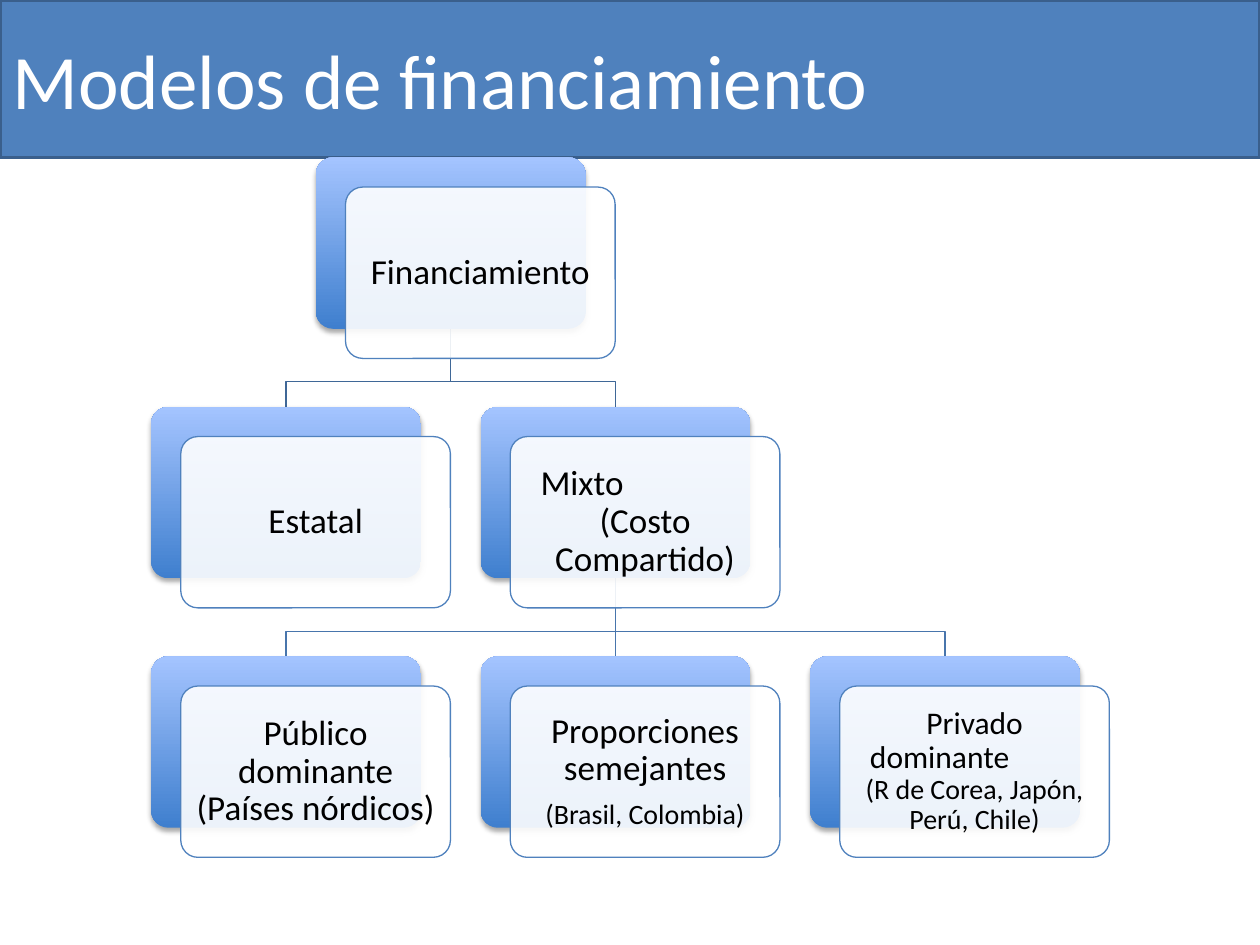
from dataclasses import dataclass

from lxml import etree
from pptx import Presentation
from pptx import util as u
from pptx.dml.color import RGBColor
from pptx.enum import shapes, text
from pptx.oxml.ns import qn

Inches, Pt = u.Inches, u.Pt
CENTER, LEFT = text.PP_ALIGN.CENTER, text.PP_ALIGN.LEFT


@dataclass(frozen=True)
class Theme:
    """Colours, font and type sizes of the slide."""
    font: str = "Calibri"
    accent: str = "4F81BD"
    title_line: str = "3A5F8C"
    grad_low: str = "3F7FCE"
    grad_high: str = "A4C4FF"
    link_upper: str = "3F6797"
    link_lower: str = "4875AC"
    white: str = "FFFFFF"
    black: str = "000000"
    title: int = 44
    body: int = 20
    compact: int = 18
    note: int = 16


@dataclass(frozen=True)
class Line:
    """One paragraph of a card."""
    words: str
    size: int = Theme.body
    align: text.PP_ALIGN = CENTER
    indent: float = 0
    after: int = 0


T = Theme()
CARD_W, CARD_H, OFFSET = 2.14, 1.36, 0.235
LEFT_X, TOP_Y, COL_STEP, ROW_STEP = 1.2, 1.25, 2.615, 1.98
CARDS = [
    (0.5, 0, [Line("Financiamiento")]),
    (0, 1, [Line("Estatal")]),
    (1, 1, [Line("Mixto", align=LEFT, indent=0.12), Line("(Costo Compartido)")]),
    (0, 2, [Line("Público dominante (Países nórdicos)")]),
    (1, 2, [Line("Proporciones semejantes", after=7),
            Line("(Brasil, Colombia)", T.note)]),
    (2, 2, [Line("Privado", T.compact),
            Line("dominante", T.compact, LEFT, 0.12),
            Line("(R de Corea, Japón, Perú, Chile)", T.note)]),
]
LINKS = [(1, 1, 2, T.link_lower), (1, 1, 1, T.link_lower), (1, 1, 0, T.link_lower),
         (0.5, 0, 1, T.link_upper), (0.5, 0, 0, T.link_upper)]


def rgb(value):
    """Return a colour from its hex value."""
    return RGBColor.from_string(value)


def set_font(p, size, color):
    """Set the font of a paragraph."""
    p.font.name, p.font.size, p.font.color.rgb = T.font, Pt(size), rgb(color)


def set_line(line, color, width=0.75):
    """Set the colour and width of a line."""
    line.color.rgb, line.width = rgb(color), Pt(width)


def add_title(s, x, y, w, h):
    """Draw the title band."""
    sp = s.shapes.add_shape(shapes.MSO_SHAPE.RECTANGLE,
                            Inches(x), Inches(y), Inches(w), Inches(h))
    sp.shadow.inherit = False
    sp.fill.solid()
    sp.fill.fore_color.rgb = rgb(T.accent)
    set_line(sp.line, T.title_line, 2)
    tf = sp.text_frame
    tf.vertical_anchor = text.MSO_ANCHOR.MIDDLE
    p = tf.paragraphs[0]
    p.text, p.alignment = "Modelos de financiamiento", LEFT
    set_font(p, T.title, T.white)


def add_link(s, x1, y1, x2, y2, color):
    """Join a parent card to a child card."""
    if x1 == x2:
        sp = s.shapes.add_connector(shapes.MSO_CONNECTOR.STRAIGHT,
                                    Inches(x1), Inches(y1), Inches(x2), Inches(y2))
        etree.SubElement(sp._element.spPr, qn("a:effectLst"))
    else:
        bend = y2 - 0.2
        builder = s.shapes.build_freeform(Inches(x1), Inches(y1))
        builder.add_line_segments([(Inches(x), Inches(y)) for x, y in
                                   ((x1, bend), (x2, bend), (x2, y2))], close=False)
        sp = builder.convert_to_shape()
        sp.fill.background()
        sp.shadow.inherit = False
    set_line(sp.line, color)


def add_panel(s, x, y, w, h):
    """Add a rounded panel without a shadow."""
    sp = s.shapes.add_shape(shapes.MSO_SHAPE.ROUNDED_RECTANGLE,
                            Inches(x), Inches(y), Inches(w), Inches(h))
    sp.adjustments[0] = 0.1
    sp.shadow.inherit = False
    return sp


def add_alpha(color, percent):
    """Set the opacity of a colour element."""
    etree.SubElement(color, qn("a:alpha"), val=str(percent * 1000))


def add_shadow(sp):
    """Add a soft shadow below a shape."""
    effects = sp._element.spPr.find(qn("a:effectLst"))
    shadow = etree.SubElement(effects, qn("a:outerShdw"), blurRad=str(Pt(3.1)),
                              dist=str(Pt(1.8)), dir="5400000", rotWithShape="0")
    add_alpha(etree.SubElement(shadow, qn("a:srgbClr"), val=T.black), 35)


def add_card(s, x, y, w, h, lines):
    """Draw a gradient panel, its translucent front panel and the text."""
    back = add_panel(s, x, y, w, h)
    back.fill.gradient()
    back.fill.gradient_angle = 90
    for stop, color in zip(back.fill.gradient_stops, (T.grad_low, T.grad_high)):
        stop.color.rgb = rgb(color)
    back.line.fill.background()
    add_shadow(back)

    x, y = x + OFFSET, y + OFFSET
    front = add_panel(s, x, y, w, h)
    front.fill.solid()
    front.fill.fore_color.rgb = rgb(T.white)
    add_alpha(front._element.spPr.find(qn("a:solidFill"))[0], 90)
    set_line(front.line, T.accent)

    pad = 0.04
    tf = s.shapes.add_textbox(Inches(x + pad), Inches(y + pad), Inches(w - 2 * pad),
                              Inches(h - 2 * pad)).text_frame
    tf.word_wrap = True
    tf.vertical_anchor = text.MSO_ANCHOR.MIDDLE
    tf.margin_left = tf.margin_right = tf.margin_top = tf.margin_bottom = Inches(0.08)
    for i, line in enumerate(lines):
        p = tf.add_paragraph() if i else tf.paragraphs[0]
        p.text, p.alignment = line.words, line.align
        p.line_spacing, p.space_after = 0.9, Pt(line.after)
        if line.indent:
            p._p.get_or_add_pPr().set("marL", str(Inches(line.indent)))
        set_font(p, line.size, T.black)


def add_tree(s, x, y):
    """Draw the links and cards of the tree from its top left corner."""
    def place(col, row):
        return x + col * COL_STEP, y + row * ROW_STEP

    for col, row, child, color in LINKS:
        x1, y1 = place(col, row)
        x2, y2 = place(child, row + 1)
        add_link(s, x1 + CARD_W / 2, y1 + CARD_H, x2 + CARD_W / 2, y2, color)
    for col, row, lines in CARDS:
        add_card(s, *place(col, row), CARD_W, CARD_H, lines)


def main():
    """Build and save the slide."""
    prs = Presentation()
    prs.slide_width, prs.slide_height = Inches(10), Inches(7.5)
    s = prs.slides.add_slide(prs.slide_layouts[6])
    add_title(s, 0, 0, 10, 1.25)
    add_tree(s, LEFT_X, TOP_Y)
    prs.save("out.pptx")


if __name__ == "__main__":
    main()
